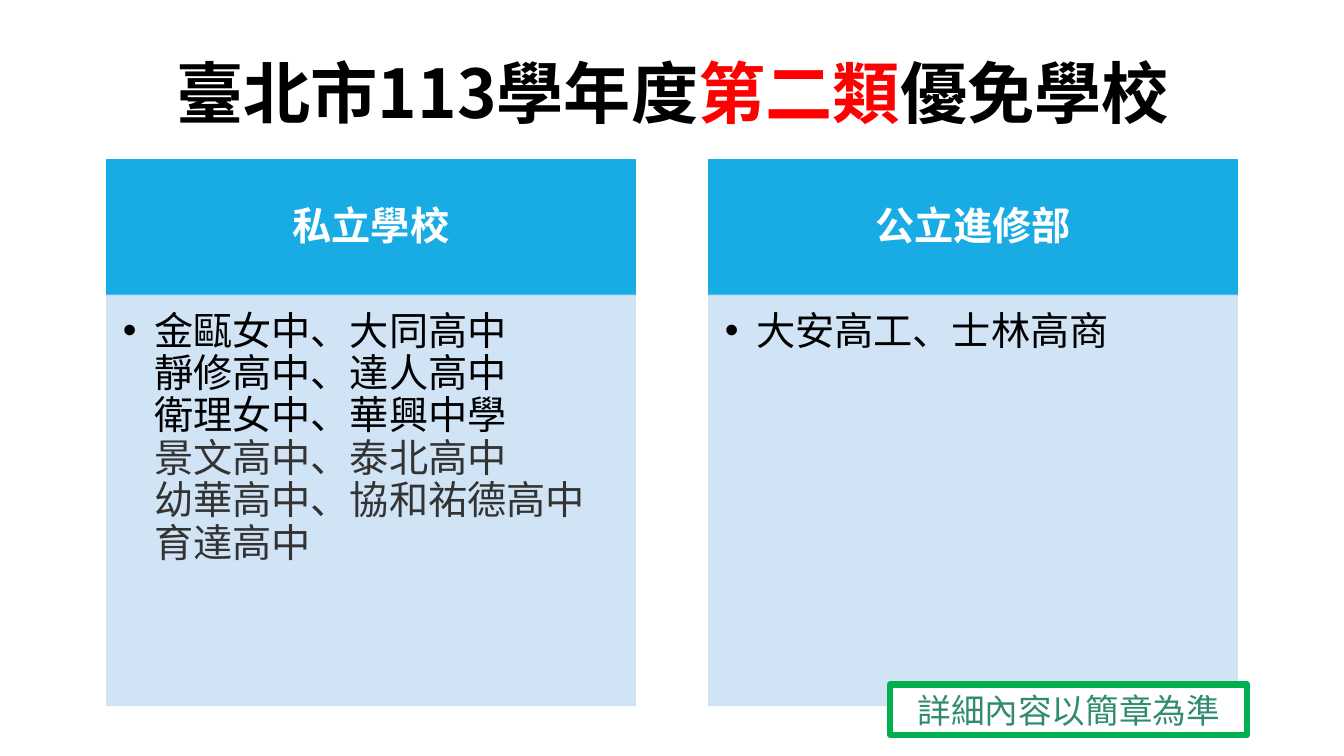
import pptx
import pptx.util
import pptx.dml.color
import pptx.enum.shapes
import pptx.enum.text
import pptx.oxml.ns
import lxml.etree

Inches, Pt = pptx.util.Inches, pptx.util.Pt
ALIGN = pptx.enum.text.PP_ALIGN
ANCHOR = pptx.enum.text.MSO_ANCHOR
CJK = "Noto Sans CJK TC"
BLACK, GREY, WHITE = "000000", "333333", "FFFFFF"
BLUE, PALE = "19ACE4", "CBE2F5"

TITLE = [("臺北市113學年度", BLACK), ("第二類", "FF0000"), ("優免學校", BLACK)]
NOTE = [("詳細內容以簡章為準", "318B71")]
GROUPS = [
    ("私立學校", CJK, [
        ("金甌女中、大同高中\n靜修高中、達人高中\n衛理女中、華興中學\n", BLACK),
        ("景文高中、泰北高中\n幼華高中、協和祐德高中育達高中", GREY),
    ]),
    ("公立進修部", "Lato", [("大安高工、士林高商", BLACK)]),
]
LEFT, TOP, WIDTH, STEP = 1.06, 1.58, 5.24, 5.97
HEAD, BODY = 1.35, 4.07


def rgb(code):
    return pptx.dml.color.RGBColor.from_string(code)


def add(parent, tag, **attrs):
    """Append a DrawingML child element."""
    return lxml.etree.SubElement(parent, pptx.oxml.ns.qn("a:" + tag), **attrs)


def write(shape, parts, size=28, face=CJK, bold=False, align=ALIGN.CENTER,
          anchor=ANCHOR.MIDDLE, inset=(0.1, 0.05, 0.1, 0.05), space=0.9,
          bullet=False):
    """Fill one paragraph with coloured runs."""
    frame = shape.text_frame
    frame.word_wrap = True
    frame.auto_size = pptx.enum.text.MSO_AUTO_SIZE.NONE
    frame.vertical_anchor = anchor
    (frame.margin_left, frame.margin_top,
     frame.margin_right, frame.margin_bottom) = map(Inches, inset)
    para = frame.paragraphs[0]
    para.alignment = align
    para.line_spacing = space
    if bullet:
        props = para._p.get_or_add_pPr()
        props.set("marL", str(Inches(0.31)))
        props.set("indent", str(Inches(-0.31)))
        add(add(props, "buClr"), "srgbClr", val=BLACK)
        add(props, "buFont", typeface="Arial")
        add(props, "buChar", char="•")
    for text, color in parts:
        for i, line in enumerate(text.split("\n")):
            if i:
                para.add_line_break()
            if not line:
                continue
            run = para.add_run()
            run.text = line
            font = run.font
            font.size, font.bold, font.name = Pt(size), bold, face
            font.color.rgb = rgb(color)
            add(run._r.get_or_add_rPr(), "ea", typeface=CJK)


def box(slide, x, y, w, h, fill, line, width=1, alpha=None):
    shape = slide.shapes.add_shape(
        pptx.enum.shapes.MSO_SHAPE.RECTANGLE, *map(Inches, (x, y, w, h)))
    shape.shadow.inherit = False
    shape.fill.solid()
    shape.fill.fore_color.rgb = rgb(fill)
    shape.line.color.rgb = rgb(line)
    shape.line.width = Pt(width)
    if alpha:
        for color in shape._element.spPr.iter(pptx.oxml.ns.qn("a:srgbClr")):
            add(color, "alpha", val=str(alpha * 1000))
    return shape


def main():
    deck = pptx.Presentation()
    deck.slide_width, deck.slide_height = Inches(13.33), Inches(7.5)
    slide = deck.slides.add_slide(deck.slide_layouts[5])

    title = slide.shapes.title
    title.left, title.top = Inches(1.17), Inches(0.36)
    title.width, title.height = Inches(11), Inches(1.19)
    write(title, TITLE, size=48, bold=True)

    for i, (name, face, schools) in enumerate(GROUPS):
        x = LEFT + i * STEP
        head = box(slide, x, TOP, WIDTH, HEAD, BLUE, BLUE)
        write(head, [(name, WHITE)], face=face, bold=True,
              inset=(0.22, 0.12, 0.22, 0.12))
        body = box(slide, x, TOP + HEAD, WIDTH, BODY, PALE, PALE, alpha=90)
        write(body, schools, align=ALIGN.LEFT, anchor=ANCHOR.TOP,
              inset=(0.16, 0.16, 0.22, 0.24), bullet=True)

    note = box(slide, 8.83, 6.79, 3.54, 0.5, WHITE, "00B050", width=4.5)
    write(note, NOTE, size=24, space=1.0)
    deck.save("out.pptx")


if __name__ == "__main__":
    main()
